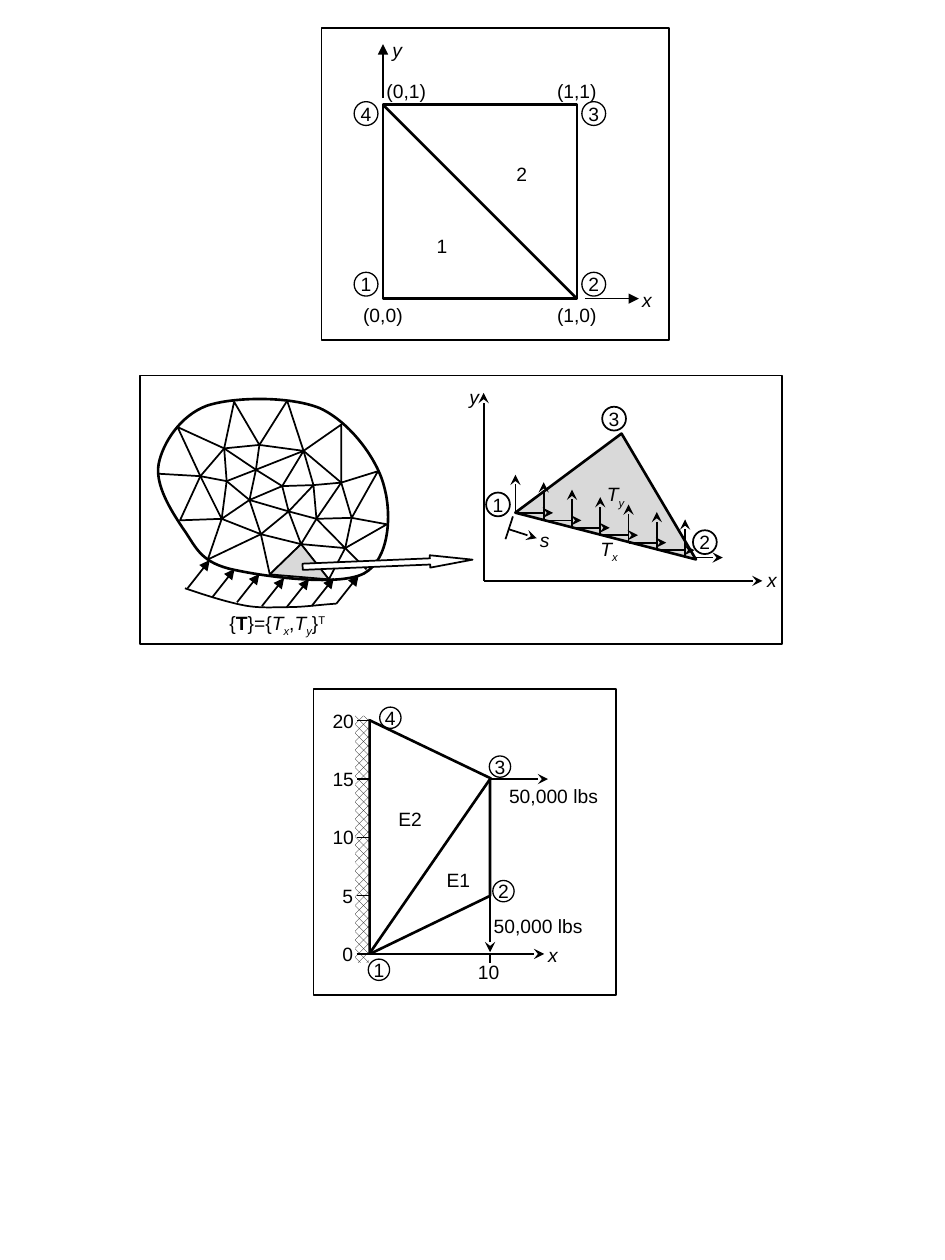
from collections import namedtuple
from lxml import etree
from pptx import Presentation, util as u
from pptx.dml.color import RGBColor
from pptx.enum import dml, shapes, text
from pptx.oxml.ns import qn

BLACK, WHITE, GREY = "000000", "FFFFFF", "D9D9D9"
KINDS = shapes.MSO_SHAPE
PLAIN, BOLD, VARIABLE = {}, {"bold": True}, {"italic": True}
SUBSCRIPT, SUPERSCRIPT = {"italic": True, "baseline": -30}, {"baseline": 30}
LABEL_HEIGHT = 0.5

# All positions and sizes are in cm; runs are (words, style) pairs.
Panel = namedtuple("Panel", "frame diameter circle_line outlines blocks lines circles labels")
Outline = namedtuple("Outline", "points fill width curved", defaults=(None, 1, False))
Block = namedtuple("Block", "kind box fill line width rotation adjustments",
                   defaults=(BLACK, 1.5, 0, ()))
Line = namedtuple("Line", "x y dx dy arrow width", defaults=(None, 1))
Circle = namedtuple("Circle", "number x y")  # x, y is the centre
Label = namedtuple("Label", "x y width runs")  # x, y is the centre


def paint(item, fill=None, line=BLACK, width=1.0, arrow=None):
    """Set fill, outline and arrowhead of a shape or connector; remove its shadow."""
    if hasattr(item, "fill"):
        item.shadow.inherit = False
        if fill == "pattern":
            item.fill.patterned()
            item.fill.pattern = dml.MSO_PATTERN.PERCENT_50
            item.fill.fore_color.rgb = RGBColor.from_string(BLACK)
            item.fill.back_color.rgb = RGBColor.from_string(WHITE)
        elif fill:
            item.fill.solid()
            item.fill.fore_color.rgb = RGBColor.from_string(fill)
        else:
            item.fill.background()
    if line:
        item.line.color.rgb = RGBColor.from_string(line)
        item.line.width = u.Pt(width)
    else:
        item.line.fill.background()
    if arrow:
        etree.SubElement(item.line._get_or_add_ln(), qn("a:tailEnd"), type=arrow)
    if not hasattr(item, "fill"):
        etree.SubElement(item._element.spPr, qn("a:effectLst"))


def write(shape, words, size=11, color=BLACK, bold=False, italic=False, baseline=0):
    """Append a run to the shape's only paragraph; baseline is in percent."""
    frame = shape.text_frame
    frame.word_wrap = True
    frame.vertical_anchor = text.MSO_ANCHOR.MIDDLE
    frame.margin_left = frame.margin_right = frame.margin_top = frame.margin_bottom = 0
    paragraph = frame.paragraphs[0]
    paragraph.alignment = text.PP_ALIGN.CENTER
    run = paragraph.add_run()
    run.text = words
    font = run.font
    font.name, font.size, font.bold, font.italic = "Arial", u.Pt(size), bold, italic
    font.color.rgb = RGBColor.from_string(color)
    if baseline:
        run._r.get_or_add_rPr().set("baseline", str(baseline * 1000))


# Panel 1: unit square split into two elements
left, bottom, side = 7.72, 6.02, 3.91
square = Panel((6.48, 0.56, 7.01, 6.3), 0.48, 0.75, [], [], [], [], [])
square.blocks.append(Block(KINDS.RECTANGLE, (left, bottom - side, side, side), WHITE))
square.lines.extend([
    Line(left, bottom - side, side, side, width=1.5),
    Line(left + side + 0.16, bottom, 1.09, 0, "triangle"),
    Line(left, bottom - side - 0.13, 0, -1.09, "triangle"),
])
for number, (column, row) in enumerate([(0, 0), (1, 0), (1, 1), (0, 1)], 1):
    x, y = left + column * side, bottom - row * side
    square.circles.append(Circle(number, x + (0.34 if column else -0.34),
                                 y + (0.18 if row else -0.29)))
    shift = 0.47 if (column, row) == (0, 1) else 0  # keeps clear of the y axis
    square.labels.append(Label(x + shift, y + (-0.27 if row else 0.33), 0.94,
                               [(f"({column},{row})", PLAIN)]))
for words, style, x, y in [("1", PLAIN, 8.91, 4.95), ("2", PLAIN, 10.52, 3.5),
                           ("x", VARIABLE, 13.04, 6.04), ("y", VARIABLE, 8.01, 1.01)]:
    square.labels.append(Label(x, y, 0.61, [(words, style)]))

# Panel 2: meshed body. Mesh nodes have one letter each; a strip is a walk over nodes.
MESH_UNIT = 0.0254
node_rings = {
    "abcdefghijkl": [(125, 376), (141, 339), (186, 319), (228, 318), (271, 337), (300, 374),
                     (307, 416), (291, 452), (261, 460), (214, 456), (165, 444), (143, 413)],
    "ABCDEFGHIJ": [(159, 378), (178, 356), (206, 353), (241, 358), (271, 383),
                   (279, 411), (274, 435), (239, 432), (207, 424), (176, 412)],
    "pqrstuv": [(180, 382), (203, 373), (224, 386), (249, 385), (251, 412),
                (229, 406), (198, 397)],
}
nodes = {name: (x * MESH_UNIT, y * MESH_UNIT)
         for names, ring in node_rings.items() for name, (x, y) in zip(names, ring)}
mesh_strips = [("aAbBcCdDeEfFgGh", None), ("iGFEDCBAlJkIjHi", None), ("AJIHGtHuIvJpA", WHITE),
               ("FtuvpBqC", None), ("pqvrustEsDrqD", None), ("rs", None), ("HjiH", GREY)]
# Bézier curves: a start, then two controls and an end for every segment
body_curve = [(145, 419), (136, 405), (123, 385), (126, 368), (129, 352), (143, 330), (164, 322),
              (185, 315), (230, 314), (254, 324), (278, 335), (300, 365), (305, 387),
              (311, 409), (309, 444), (289, 455), (268, 466), (205, 457), (181, 451),
              (158, 445), (155, 433), (145, 419)]
load_curve = [(147, 467), (162, 472), (178, 477), (191, 480), (205, 483), (216, 482),
              (229, 482), (241, 482), (254, 480), (267, 479)]

body = Panel((2.82, 7.57, 12.95, 5.41), 0.48, 1, [], [], [], [], [])
for curve, fill, width in [(body_curve, WHITE, 1.5), (load_curve, None, 1)]:
    points = [(x * MESH_UNIT, y * MESH_UNIT) for x, y in curve]
    body.outlines.append(Outline(points, fill, width, curved=True))
for strip, fill in mesh_strips:
    body.outlines.append(Outline([nodes[name] for name in strip], fill))
body.blocks.extend([
    Block(KINDS.ISOSCELES_TRIANGLE, (10.59, 8.76, 3.76, 2.08), GREY,
          rotation=14.5, adjustments=[0.445]),
    Block(KINDS.RIGHT_ARROW, (6.1, 11.23, 3.43, 0.25), WHITE, width=1,
          rotation=357.6, adjustments=[0.5, 3.44]),
])
axis_x, axis_y = 9.75, 11.71
body.lines.extend([
    Line(axis_x, axis_y, 5.62, 0, "stealth"), Line(axis_x, axis_y, 0, -3.79, "stealth"),
    Line(10.34, 10.41, -0.15, 0.46), Line(10.26, 10.67, 0.56, 0.18, "stealth"),
])
for step, load_y in enumerate([11.86, 12.04, 12.14, 12.22, 12.24, 12.22, 12.17]):
    body.lines.append(Line(3.78 + 0.5 * step, load_y, 0.45, -0.57, "triangle"))
    x, y = 10.39 + 0.57 * step, 10.34 + 0.15 * step
    body.lines.extend([Line(x, y, 0.76, 0, "stealth"), Line(x, y, 0, -0.77, "stealth")])
body.circles.extend([Circle(1, 10.04, 10.17), Circle(2, 14.21, 10.93), Circle(3, 12.38, 8.44)])
traction_x = [("T", VARIABLE), ("x", SUBSCRIPT)]
traction_y = [("T", VARIABLE), ("y", SUBSCRIPT)]
traction_vector = [("{", PLAIN), ("T", BOLD), ("}={", PLAIN), *traction_x, (",", PLAIN),
                   *traction_y, ("}", PLAIN), ("T", SUPERSCRIPT)]
body.labels.extend([
    Label(12.28, 11.1, 0.48, traction_x), Label(12.41, 10, 0.48, traction_y),
    Label(5.59, 12.59, 2.08, traction_vector), Label(15.56, 11.68, 0.48, [("x", VARIABLE)]),
    Label(9.56, 8, 0.48, [("y", VARIABLE)]), Label(10.98, 10.89, 0.48, [("s", VARIABLE)]),
])

# Panel 3: bracket on a wall, 10 wide and 20 high in its own units
wall, base, unit_x, unit_y = 7.46, 19.23, 0.242, 0.235
tip = wall + 10 * unit_x
level = {value: base - value * unit_y for value in range(0, 21, 5)}
bracket = Panel((6.32, 13.89, 6.1, 6.17), 0.43, 0.75, [], [], [], [], [])
bracket.outlines.append(Outline([(tip, level[15]), (tip, level[5]), (wall, base)], width=1.5))
bracket.blocks.extend([
    Block(KINDS.RECTANGLE, (7.16, 14.43, 0.28, 4.98), "pattern", line=None),
    Block(KINDS.ISOSCELES_TRIANGLE, (6.32, 15.65, 4.7, 2.44), WHITE,
          rotation=90, adjustments=[0.249]),
])
bracket.lines.extend([
    Line(7.19, base, 3.78, 0, "stealth"), Line(tip, base, 0, 0.18, width=0.75),
    Line(tip, level[15], 1.17, 0, "stealth", 1.5), Line(tip, level[5], 0, 1.14, "stealth", 1.5),
])
for value, y in level.items():
    if value:
        bracket.lines.append(Line(7.44, y, -0.25, 0, width=0.75))
    bracket.labels.append(Label(6.92 if value >= 10 else 7.01, y, 0.53, [(str(value), PLAIN)]))
bracket.circles.extend([
    Circle(1, wall + 0.18, base + 0.32), Circle(2, tip + 0.27, level[5] - 0.09),
    Circle(3, tip + 0.2, level[15] - 0.25), Circle(4, wall + 0.41, level[20] - 0.06),
])
for words, style, x, y in [
        ("50,000 lbs", PLAIN, 11.16, 16.05), ("50,000 lbs", PLAIN, 10.85, 18.67),
        ("E2", PLAIN, 8.27, 16.51), ("E1", PLAIN, 9.24, 17.73),
        ("10", PLAIN, 9.85, 19.6), ("x", VARIABLE, 11.15, 19.25)]:
    bracket.labels.append(Label(x, y, 1.83 if "lbs" in words else 0.53, [(words, style)]))

presentation = Presentation()
presentation.slide_width, presentation.slide_height = u.Cm(19.05), u.Cm(25.4)
slide = presentation.slides.add_slide(presentation.slide_layouts[6])

for panel in (square, body, bracket):
    group = slide.shapes.add_group_shape().shapes
    for outline in panel.outlines:
        # Freeform points are whole numbers, so they count hundredths of a cm
        start, *rest = [(round(x * 100), round(y * 100)) for x, y in outline.points]
        builder = group.build_freeform(*start, scale=u.Cm(1) / 100)
        builder.add_line_segments(rest, close=start == rest[-1])
        shape = builder.convert_to_shape()
        paint(shape, outline.fill, width=outline.width)
        if outline.curved:  # merge every three straight segments into one Bézier segment
            segments = iter(list(shape._element.iter(qn("a:lnTo")))[:len(rest)])
            for triple in zip(segments, segments, segments):
                curve = etree.Element(qn("a:cubicBezTo"))
                triple[0].addprevious(curve)
                for segment in triple:
                    curve.append(segment[0])
                    segment.getparent().remove(segment)
    for block in panel.blocks:
        shape = group.add_shape(block.kind, *map(u.Cm, block.box))
        shape.rotation = block.rotation
        for index, adjustment in enumerate(block.adjustments):
            shape.adjustments[index] = adjustment
        paint(shape, block.fill, block.line, block.width)
    for x, y, dx, dy, arrow, width in panel.lines:
        ends = map(u.Cm, (x, y, x + dx, y + dy))
        connector = group.add_connector(shapes.MSO_CONNECTOR.STRAIGHT, *ends)
        paint(connector, width=width, arrow=arrow)
    size, radius = panel.diameter, panel.diameter / 2
    for number, x, y in panel.circles:
        circle = group.add_shape(KINDS.OVAL, *map(u.Cm, (x - radius, y - radius, size, size)))
        paint(circle, width=panel.circle_line)
        write(circle, str(number))
    for x, y, width, runs in panel.labels:
        box = (x - width / 2, y - LABEL_HEIGHT / 2, width, LABEL_HEIGHT)
        label = group.add_textbox(*map(u.Cm, box))
        for words, style in runs:
            write(label, words, **style)
    paint(group.add_shape(KINDS.RECTANGLE, *map(u.Cm, panel.frame)))

presentation.save("out.pptx")
